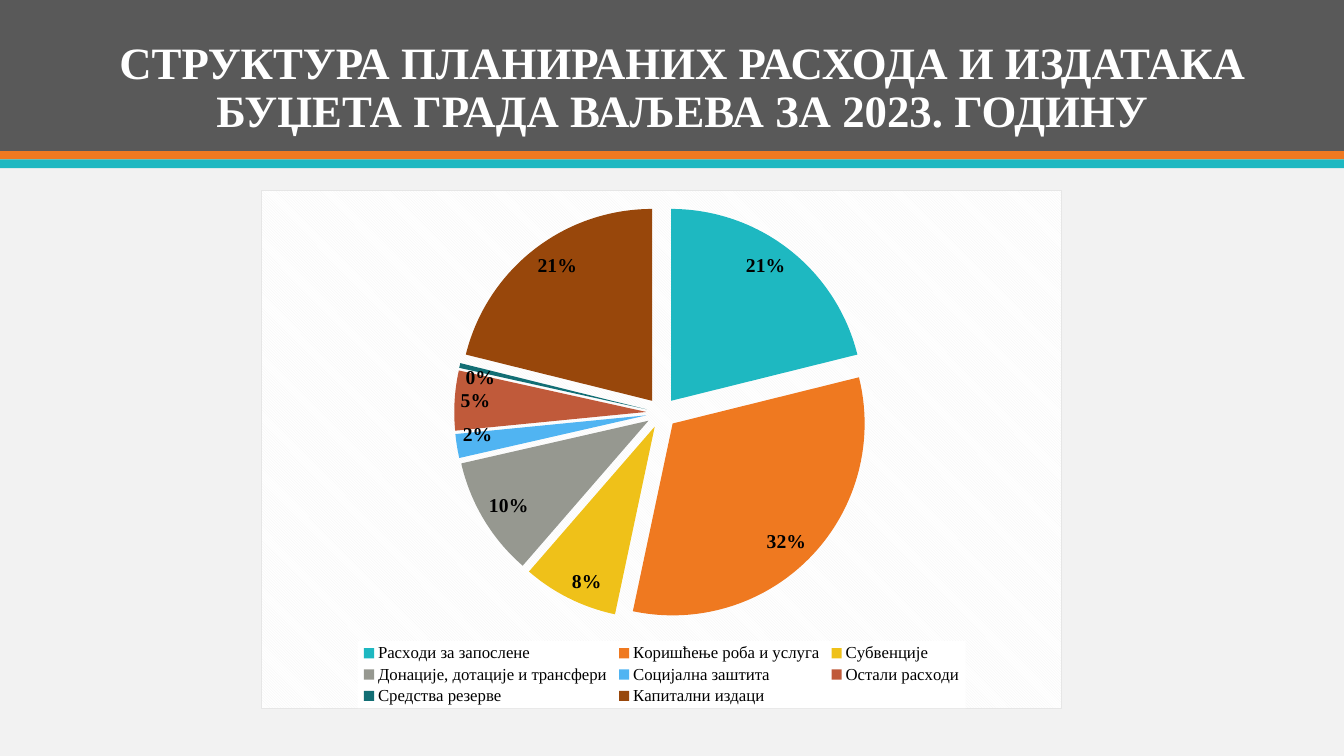
from dataclasses import dataclass

from lxml import etree
from pptx import Presentation
from pptx.chart.data import CategoryChartData
from pptx.dml.color import RGBColor
from pptx.enum import chart as ch, shapes, text
from pptx.oxml import parse_xml
from pptx.oxml.ns import nsdecls, qn
from pptx.util import Cm, Pt

TITLE = "СТРУКТУРА ПЛАНИРАНИХ РАСХОДА И ИЗДАТАКА БУЏЕТА ГРАДА ВАЉЕВА ЗА 2023. ГОДИНУ"
EXPENSES = [
    ("Расходи за запослене", 21, "1EB8C1"),
    ("Коришћење роба и услуга", 32, "EF7920"),
    ("Субвенције", 8, "EFC119"),
    ("Донације, дотације и трансфери", 10, "969890"),
    ("Социјална заштита", 2, "50B4F2"),
    ("Остали расходи", 5, "C05A3A"),
    ("Средства резерве", 0.4, "126E74"),
    ("Капитални издаци", 21, "98470B"),
]
BANDS = [(3.81, "595959"), (0.21, "EF7920"), (0.22, "1EB8C1")]
PIE_AREA = (0.24, 0.03, 0.52, 0.8)
LEGEND_AREA = (0.12, 0.87, 0.76, 0.13)
EXPLOSION = 8


@dataclass(frozen=True)
class Theme:
    background: str = "F2F2F2"
    title: str = "FFFFFF"
    label: str = "000000"
    chart_text: str = "595959"
    pattern: str = "F2F2F2"
    panel: str = "FFFFFF"
    border: str = "E6E6E6"
    font: str = "Times New Roman"
    chart_font: str = "Cambria"
    title_size: int = 32
    label_size: int = 14
    legend_size: int = 12
    chart_size: int = 10


theme = Theme()


def paint(fill, color):
    fill.solid()
    fill.fore_color.rgb = RGBColor.from_string(color)


def style(font, name, size, color, bold=False):
    font.name, font.size, font.bold = name, Pt(size), bold
    font.color.rgb = RGBColor.from_string(color)


def solid(color):
    return f'<a:solidFill><a:srgbClr val="{color}"/></a:solidFill>'


def frame(content):
    return parse_xml(f'<c:spPr {nsdecls("c", "a")}>{content}</c:spPr>')


def place(parent, index, area, inner=False):
    for old in parent.findall(qn("c:layout")):
        parent.remove(old)
    layout = etree.Element(qn("c:layout"))
    manual = etree.SubElement(layout, qn("c:manualLayout"))
    settings = [("layoutTarget", "inner")] if inner else []
    settings += [("xMode", "edge"), ("yMode", "edge")]
    settings += zip("xywh", area)
    for tag, value in settings:
        etree.SubElement(manual, qn(f"c:{tag}")).set("val", str(value))
    parent.insert(index, layout)


def add_bands(slide, width):
    top = 0
    for i, (height, color) in enumerate(BANDS):
        sp = slide.shapes.add_shape(shapes.MSO_SHAPE.RECTANGLE, 0, Cm(top), width, Cm(height))
        sp.shadow.inherit = False
        paint(sp.fill, color)
        sp.line.fill.background()
        slide.shapes._spTree.insert(2 + i, sp._element)
        top += height


def add_title(slide):
    sp = slide.shapes.title
    sp.left, sp.top, sp.width, sp.height = Cm(2), Cm(0.72), Cm(30.4), Cm(2.87)
    tf = sp.text_frame
    tf.text = TITLE
    tf.word_wrap = True
    tf.auto_size = text.MSO_AUTO_SIZE.NONE
    tf.vertical_anchor = text.MSO_ANCHOR.BOTTOM
    p = tf.paragraphs[0]
    p.alignment = text.PP_ALIGN.CENTER
    p.line_spacing = 0.9
    style(p.runs[0].font, theme.font, theme.title_size, theme.title, True)


def add_pie(slide):
    data = CategoryChartData()
    data.categories = [name for name, _, _ in EXPENSES]
    data.add_series("Series 1", [value for _, value, _ in EXPENSES])
    chart = slide.shapes.add_chart(
        ch.XL_CHART_TYPE.PIE, Cm(6.58), Cm(4.78), Cm(20.19), Cm(13.08), data
    ).chart
    chart.has_title = False
    style(chart.font, theme.chart_font, theme.chart_size, theme.chart_text)

    chart.has_legend = True
    legend = chart.legend
    legend.position = ch.XL_LEGEND_POSITION.BOTTOM
    legend.include_in_layout = False
    style(legend.font, theme.font, theme.legend_size, theme.label)
    place(legend._element, 1, LEGEND_AREA)
    legend._element.find(qn("c:txPr")).addprevious(frame(solid(theme.panel)))

    plot = chart.plots[0]
    plot.vary_by_categories = True
    series = plot.series[0]
    for i, (_, _, color) in enumerate(EXPENSES):
        paint(series.points[i].format.fill, color)
    explosion = etree.Element(qn("c:explosion"))
    explosion.set("val", str(EXPLOSION))
    series._element.find(qn("c:dPt")).addprevious(explosion)

    labels = series.data_labels
    labels.show_percentage = True
    labels.show_value = False
    labels.number_format = "0%"
    labels.number_format_is_linked = False
    labels.position = ch.XL_LABEL_POSITION.INSIDE_END
    style(labels.font, theme.font, theme.label_size, theme.label, True)

    body = chart._chartSpace.find(qn("c:chart"))
    place(body.find(qn("c:plotArea")), 0, PIE_AREA, inner=True)
    body.addnext(frame(
        '<a:pattFill prst="dkDnDiag">'
        f'<a:fgClr><a:srgbClr val="{theme.pattern}"/></a:fgClr>'
        f'<a:bgClr><a:srgbClr val="{theme.panel}"/></a:bgClr></a:pattFill>'
        f'<a:ln w="{Pt(0.75)}">{solid(theme.border)}</a:ln>'
    ))


def main():
    prs = Presentation()
    prs.slide_width, prs.slide_height = Cm(33.87), Cm(19.05)
    slide = prs.slides.add_slide(prs.slide_layouts[5])
    paint(slide.background.fill, theme.background)
    add_bands(slide, prs.slide_width)
    add_title(slide)
    add_pie(slide)
    prs.save("out.pptx")


if __name__ == "__main__":
    main()
